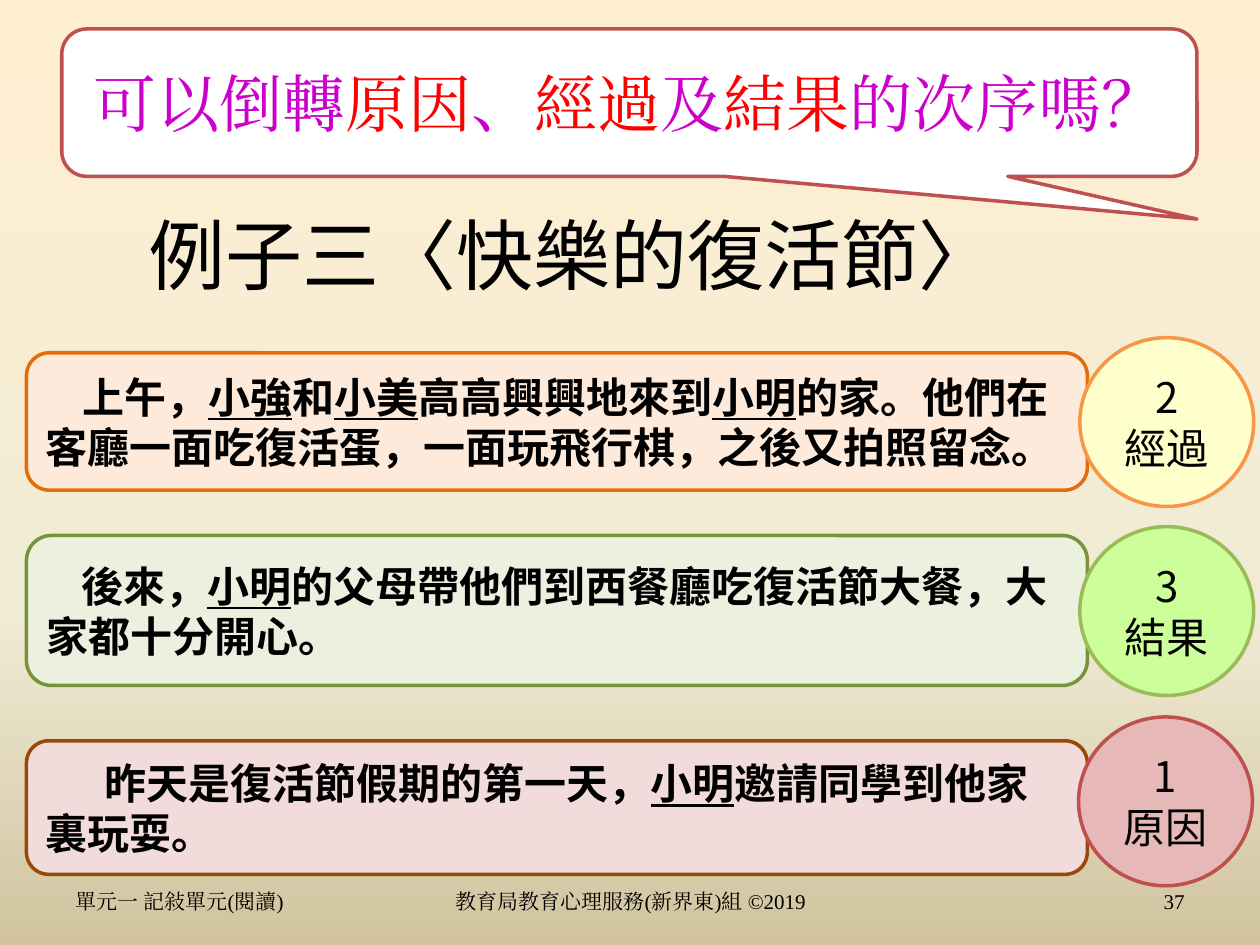
from lxml import etree
from copy import deepcopy
from pptx import Presentation
from pptx.dml.color import RGBColor
from pptx.enum.shapes import MSO_SHAPE
from pptx.enum.text import MSO_ANCHOR, PP_ALIGN
from pptx.oxml.ns import qn
from pptx.util import Inches, Pt

ROUND, OVAL = MSO_SHAPE.ROUNDED_RECTANGLE, MSO_SHAPE.OVAL
CALLOUT = MSO_SHAPE.ROUNDED_RECTANGULAR_CALLOUT
LEFT, MID, RIGHT = PP_ALIGN.LEFT, PP_ALIGN.CENTER, PP_ALIGN.RIGHT
SANS, SERIF = "Noto Sans CJK SC", "Times New Roman"

BLACK, WHITE = RGBColor(0, 0, 0), RGBColor(255, 255, 255)
RED, PURPLE = RGBColor(255, 0, 0), RGBColor(0xCC, 0, 0xCC)
BRICK = RGBColor(0xC0, 0x50, 0x4D)
ROSE, PINK, BROWN = (RGBColor(0xF2, 0xDC, 0xDB), RGBColor(0xE6, 0xB9, 0xB8),
                     RGBColor(0x98, 0x48, 0x07))
PEACH, CREAM = RGBColor(0xFD, 0xEA, 0xDA), RGBColor(0xFF, 0xFF, 0xCC)
RUST, AMBER = RGBColor(0xE4, 0x6C, 0x0A), RGBColor(0xF7, 0x96, 0x46)
MINT, LIME = RGBColor(0xEB, 0xF1, 0xDE), RGBColor(0xCC, 0xFF, 0x99)
MOSS, LEAF = RGBColor(0x77, 0x93, 0x3C), RGBColor(0x9B, 0xBB, 0x59)
SKY = [(0, "FFEFD1"), (65, "F0EBD5"), (100, "D1C39F")]

BOX_X, BOX_W = 0.21, 8.42
DISC_W, DISC_H = 1.38, 1.34
FOOT_Y, FOOT_H = 6.95, 0.4

# box top, height, fill, line, first-line indent, text; disc left, top, fill, line, text
ROWS = [
    ((2.8, 1.09, PEACH, RUST, 0.29,
      "上午，|小強|和|小美|高高興興地來到|小明|的家。他們在客廳一面吃復活蛋，一面玩飛行棋，之後又拍照留念。"),
     (8.57, 2.68, CREAM, AMBER, "2\n經過")),
    ((4.25, 1.19, MINT, MOSS, 0.28,
      "後來，|小明|的父母帶他們到西餐廳吃復活節大餐，大家都十分開心。"),
     (8.57, 4.18, LIME, LEAF, "3\n結果")),
    ((5.88, 1.06, ROSE, BROWN, 0.47,
      "昨天是復活節假期的第一天，|小明|邀請同學到他家裏玩耍。"),
     (8.56, 5.69, PINK, BRICK, "1\n原因")),
]
FEET = [
    (0.5, 2.33, LEFT, "單元一 記敍單元(閱讀)"),
    (3.42, 3.17, MID, "教育局教育心理服務(新界東)組 ©2019"),
    (7.17, 2.33, RIGHT, "37"),
]


def write(shape, text, size=24, font=SANS, color=BLACK, accent=None,
          bold=False, line=False, align=LEFT, indent=0):
    """Fill a shape with text; every second part between bars is stressed."""
    frame = shape.text_frame
    frame.word_wrap = True
    frame.vertical_anchor = MSO_ANCHOR.MIDDLE
    for i, row in enumerate(text.split("\n")):
        para = frame.add_paragraph() if i else frame.paragraphs[0]
        para.alignment = align
        if indent:
            props = para._p.get_or_add_pPr()
            props.set("marL", "0")
            props.set("indent", str(Inches(indent)))
        for j, part in enumerate(row.split("|")):
            run = para.add_run()
            run.text = part
            face = run.font
            face.size, face.name, face.bold = Pt(size), font, bold
            stress = j % 2 == 1
            face.color.rgb = accent if stress and accent else color
            face.underline = line and stress
            east = etree.SubElement(run._r.get_or_add_rPr(), qn("a:ea"))
            east.set("typeface", font)


def draw(slide, kind, at, fill, edge):
    shape = slide.shapes.add_shape(kind, *map(Inches, at))
    shape.shadow.inherit = False
    shape.fill.solid()
    shape.fill.fore_color.rgb = fill
    shape.line.color.rgb = edge
    shape.line.width = Pt(2)
    return shape


def paint(slide):
    """Give the slide its three-stop background."""
    fill = slide.background.fill
    fill.gradient()
    fill.gradient_angle = 270
    stops = slide.element.find(".//" + qn("a:gsLst"))
    first = deepcopy(stops[0])
    for stop in list(stops):
        stops.remove(stop)
    for place, shade in SKY:
        stop = deepcopy(first)
        stop.set("pos", str(place * 1000))
        for old in list(stop):
            stop.remove(old)
        etree.SubElement(stop, qn("a:srgbClr")).set("val", shade)
        stops.append(stop)


def head(slide):
    title = slide.shapes.title
    title.left, title.top, title.width, title.height = map(
        Inches, (0.76, 1.5, 7.57, 1.03))
    write(title, "例子三〈快樂的復活節〉", size=44, align=MID)


def ask(slide):
    shape = draw(slide, CALLOUT, (0.49, 0.23, 9.01, 1.17), WHITE, BRICK)
    for i, value in enumerate((0.5, 0.79, 0.17)):
        shape.adjustments[i] = value
    write(shape, "可以倒轉|原因|、|經過|及|結果|的次序嗎？", size=36,
          font=SERIF, color=PURPLE, accent=RED, align=MID)


def foot(slide):
    for x, width, align, text in FEET:
        box = slide.shapes.add_textbox(
            *map(Inches, (x, FOOT_Y, width, FOOT_H)))
        write(box, text, size=12, font=SERIF, align=align)


def main():
    deck = Presentation()
    deck.slide_width, deck.slide_height = Inches(10), Inches(7.5)
    slide = deck.slides.add_slide(deck.slide_layouts[5])
    paint(slide)
    head(slide)
    for (y, height, fill, edge, indent, text), _ in ROWS:
        box = draw(slide, ROUND, (BOX_X, y, BOX_W, height), fill, edge)
        write(box, text, bold=True, line=True, indent=indent)
    foot(slide)
    for _, (x, y, fill, edge, text) in ROWS:
        disc = draw(slide, OVAL, (x, y, DISC_W, DISC_H), fill, edge)
        write(disc, text, align=MID)
    ask(slide)
    deck.save("out.pptx")


if __name__ == "__main__":
    main()
